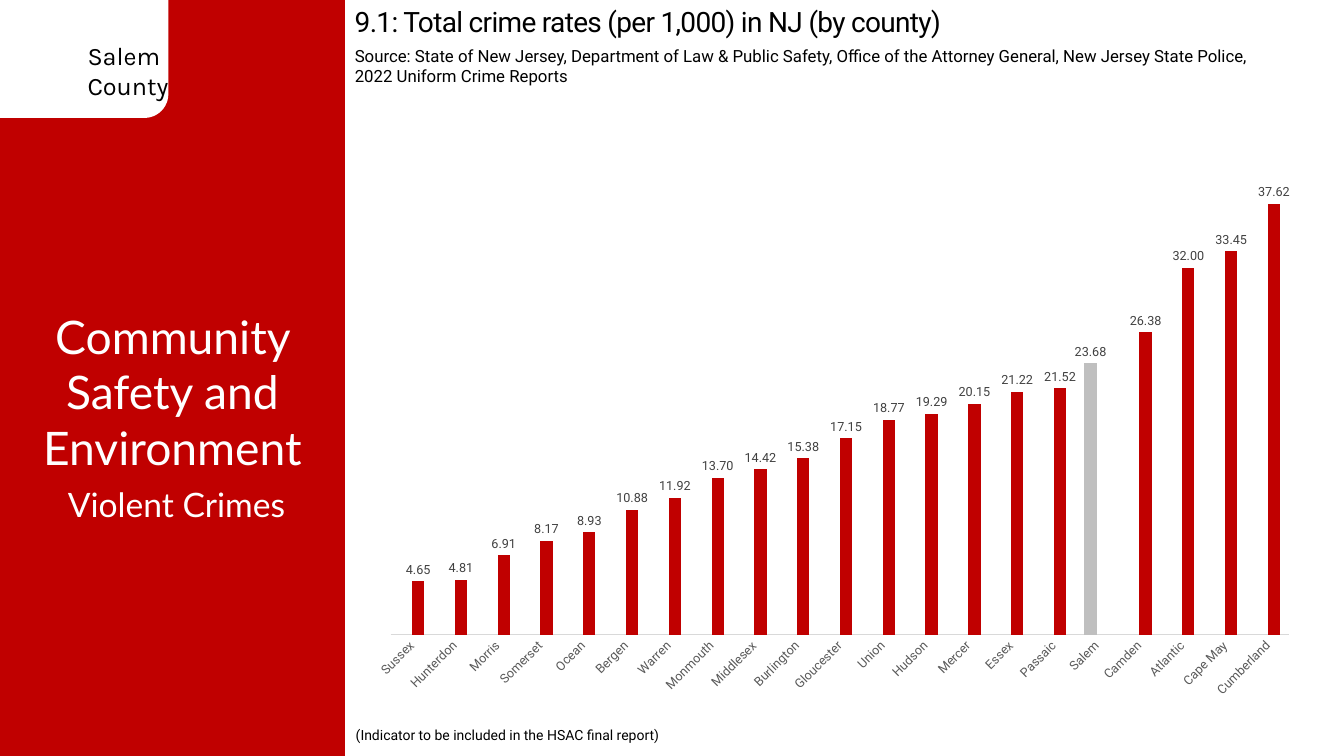
import pptx
import pptx.chart.data
import pptx.dml.color
import pptx.enum.chart
import pptx.enum.shapes
import pptx.enum.text
import pptx.util
from pptx.util import Inches

RED, WHITE, BLACK = "C00000", "FFFFFF", "000000"
HIGHLIGHT = "Salem"
CRIME_RATES = {
    "Sussex": 4.65, "Hunterdon": 4.81, "Morris": 6.91, "Somerset": 8.17,
    "Ocean": 8.93, "Bergen": 10.88, "Warren": 11.92, "Monmouth": 13.7,
    "Middlesex": 14.42, "Burlington": 15.38, "Gloucester": 17.15,
    "Union": 18.77, "Hudson": 19.29, "Mercer": 20.15, "Essex": 21.22,
    "Passaic": 21.52, "Salem": 23.68, "Camden": 26.38, "Atlantic": 32,
    "Cape May": 33.45, "Cumberland": 37.62,
}
ALIGN = pptx.enum.text.PP_ALIGN


def rgb(hex_color):
    return pptx.dml.color.RGBColor.from_string(hex_color)


def set_font(font, name, size, color):
    font.name = name
    font.size = pptx.util.Pt(size)
    font.color.rgb = rgb(color)


def add_text(slide, text, left, top, width, height, font="Roboto", size=12,
             color=BLACK, align=ALIGN.LEFT, middle=False, spacing=None):
    box = slide.shapes.add_textbox(Inches(left), Inches(top), Inches(width), Inches(height))
    frame = box.text_frame
    frame.word_wrap = True
    if middle:
        frame.vertical_anchor = pptx.enum.text.MSO_ANCHOR.MIDDLE
    else:
        frame.auto_size = pptx.enum.text.MSO_AUTO_SIZE.SHAPE_TO_FIT_TEXT
    frame.text = text
    for paragraph in frame.paragraphs:
        paragraph.alignment = align
        for run in paragraph.runs:
            set_font(run.font, font, size, color)
            if spacing is not None:
                run._r.get_or_add_rPr().set("spc", str(int(spacing * 100)))


def add_panel(slide, preset, left, top, width, height, color):
    panel = slide.shapes.add_shape(
        preset, Inches(left), Inches(top), Inches(width), Inches(height))
    panel.shadow.inherit = False
    panel.fill.solid()
    panel.fill.fore_color.rgb = rgb(color)
    panel.line.fill.background()


def add_sidebar(slide, left, top, width, height):
    presets = pptx.enum.shapes.MSO_SHAPE
    add_panel(slide, presets.RECTANGLE, left, top, width, height, RED)
    # County tab in the corner
    add_panel(slide, presets.ROUNDED_RECTANGLE, left - 0.33, top - 0.25, 2, 1.42, WHITE)
    add_text(slide, "Salem\nCounty", left + 0.77, top + 0.35, 1, 0.71, font="Karla", size=18)
    # Section heading and topic
    heading = dict(font="Lato", color=WHITE, align=ALIGN.CENTER)
    add_text(slide, "Community Safety and Environment",
             left, top + 3.01, width, 1.77, size=33, **heading)
    add_text(slide, "Violent Crimes", left + 0.04, top + 4.75, width, 0.5, size=24, **heading)


def set_plot_area(chart, x, y, w, h):
    layout = pptx.oxml.parse_xml(
        '<c:layout xmlns:c="http://schemas.openxmlformats.org/drawingml/2006/chart">'
        '<c:manualLayout><c:layoutTarget val="inner"/>'
        '<c:xMode val="edge"/><c:yMode val="edge"/>'
        f'<c:x val="{x}"/><c:y val="{y}"/><c:w val="{w}"/><c:h val="{h}"/>'
        '</c:manualLayout></c:layout>')
    plot_area = chart._chartSpace.chart.plotArea
    for old_layout in plot_area.xpath("c:layout"):
        plot_area.remove(old_layout)
    plot_area.insert(0, layout)


def add_rate_chart(slide, left, top, width, height):
    enums = pptx.enum.chart
    data = pptx.chart.data.CategoryChartData(number_format="0.00")
    data.categories = list(CRIME_RATES)
    data.add_series("Series 1", [r if c == HIGHLIGHT else None for c, r in CRIME_RATES.items()])
    data.add_series("Series 2", [None if c == HIGHLIGHT else r for c, r in CRIME_RATES.items()])
    chart = slide.shapes.add_chart(
        enums.XL_CHART_TYPE.COLUMN_CLUSTERED, Inches(left), Inches(top),
        Inches(width), Inches(height), data).chart
    chart.has_legend = False
    chart.has_title = False
    set_font(chart.font, "Calibri", 10, BLACK)
    set_plot_area(chart, 0.038, 0.115, 0.904, 0.758)

    # Columns and their values
    plot = chart.plots[0]
    plot.vary_by_categories = False
    plot.gap_width = 150
    plot.overlap = 0
    for series, color in zip(plot.series, ("BFBFBF", RED)):
        series.format.fill.solid()
        series.format.fill.fore_color.rgb = rgb(color)
        series.invert_if_negative = False
        labels = series.data_labels
        labels.show_value = True
        labels.position = enums.XL_LABEL_POSITION.OUTSIDE_END
        labels.number_format = "0.00"
        labels.number_format_is_linked = False
        set_font(labels.font, "Roboto", 9, "404040")

    # Axes
    counties, rates = chart.category_axis, chart.value_axis
    for axis in (counties, rates):
        axis.has_major_gridlines = False
        axis.major_tick_mark = axis.minor_tick_mark = enums.XL_TICK_MARK.NONE
    set_font(counties.tick_labels.font, "Roboto", 9, "595959")
    counties._element.xpath("c:txPr/a:bodyPr")[0].set("rot", str(-45 * 60000))
    counties.format.line.color.rgb = rgb("D9D9D9")
    counties.format.line.width = pptx.util.Pt(0.75)
    rates.minimum_scale, rates.maximum_scale = 0, 40
    rates.tick_label_position = enums.XL_TICK_LABEL_POSITION.NONE
    rates.format.line.fill.background()


def add_indicator(slide, left, top, width):
    add_rate_chart(slide, left + 0.08, top + 1.06, width, 6)
    add_text(slide, "9.1: Total crime rates (per 1,000) in NJ (by county)",
             left, top, width, 0.44, size=20, spacing=-0.5)
    add_text(slide, "Source: State of New Jersey, Department of Law & Public Safety, "
             "Office of the Attorney General, New Jersey State Police, "
             "2022 Uniform Crime Reports", left, top + 0.4, 9.19, 0.5)
    add_text(slide, "(Indicator to be included in the HSAC final report)",
             left + 0.01, top + 7.06, 4.29, 0.46, size=10, align=ALIGN.JUSTIFY, middle=True)


def main():
    deck = pptx.Presentation()
    deck.slide_width, deck.slide_height = Inches(13.33), Inches(7.5)
    slide = deck.slides.add_slide(deck.slide_layouts[6])
    add_sidebar(slide, 0, 0, 3.42, 7.5)
    add_indicator(slide, 3.42, 0, 9.86)
    deck.save("out.pptx")


if __name__ == "__main__":
    main()
